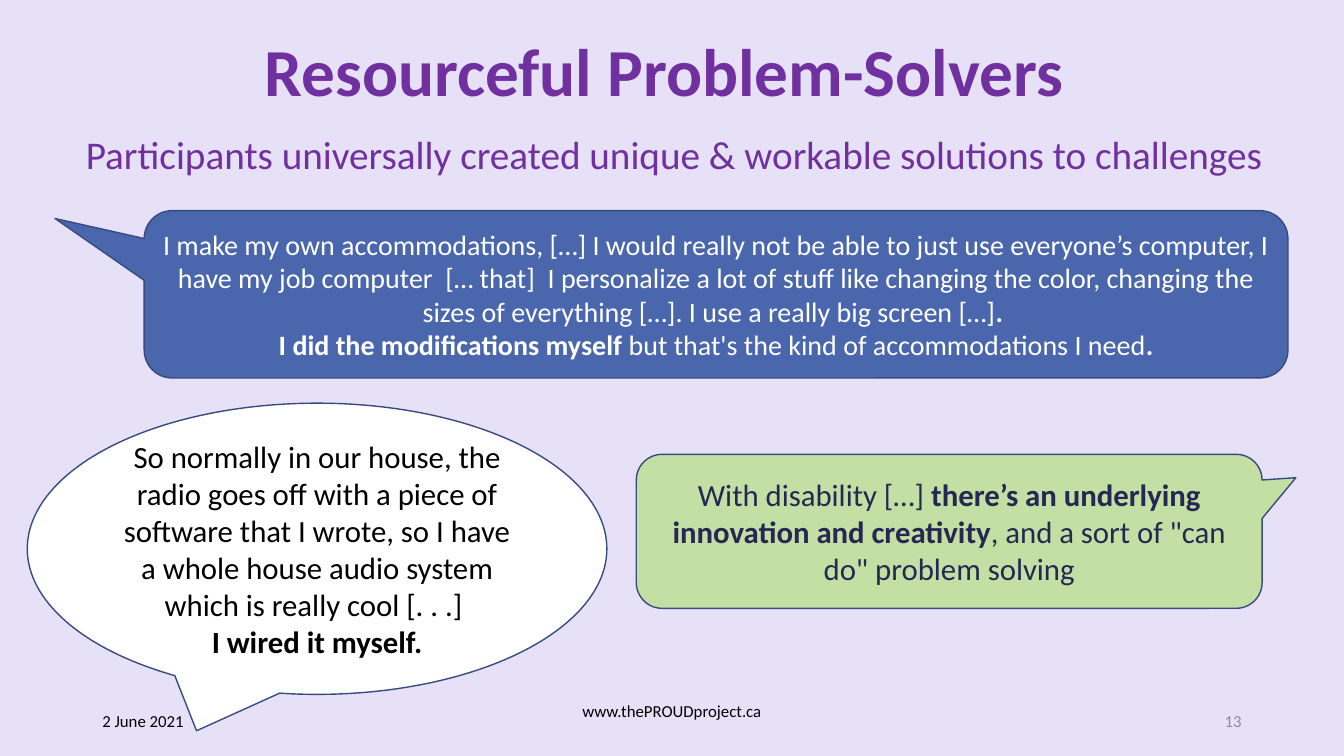
from lxml.etree import SubElement
from pptx import Presentation
from pptx.dml.color import RGBColor
from pptx.enum.shapes import MSO_SHAPE
from pptx.enum.text import MSO_ANCHOR, PP_ALIGN
from pptx.oxml.ns import qn
from pptx.util import Pt

FONT = "Calibri"
COLORS = {
    "background": "E7E1F8",
    "heading": "7030A0",
    "outline": "374B7F",
    "blue": "4A66AC",
    "green": "91DE26",
    "white": "FFFFFF",
    "black": "000000",
    "navy": "242852",
    "gray": "8C8C8C",
}


def color(name):
    return RGBColor.from_string(COLORS[name])


def write_text(frame, paragraphs, size, ink, align=PP_ALIGN.CENTER,
               anchor=MSO_ANCHOR.MIDDLE, line_spacing=None):
    """Fill a frame with paragraphs, each a list of (text, bold) runs."""
    frame.word_wrap = True
    frame.vertical_anchor = anchor
    for index, spans in enumerate(paragraphs):
        para = frame.add_paragraph() if index else frame.paragraphs[0]
        para.alignment = align
        if line_spacing:
            para.line_spacing = line_spacing
        for text, bold in spans:
            span = para.add_run()
            span.text = text
            span.font.name = FONT
            span.font.size = Pt(size)
            span.font.bold = bold
            span.font.color.rgb = color(ink)


def add_text(page, box, text, size, ink, bold=False, **layout):
    left, top, width, height = box
    shape = page.shapes.add_textbox(Pt(left), Pt(top), Pt(width), Pt(height))
    write_text(shape.text_frame, [[(text, bold)]], size, ink, **layout)
    return shape


def add_callout(page, box, kind, fill, adjustments, paragraphs, size, ink,
                opacity=None):
    """Place a speech bubble whose pointer follows the adjustments."""
    left, top, width, height = box
    bubble = page.shapes.add_shape(kind, Pt(left), Pt(top), Pt(width), Pt(height))
    bubble.shadow.inherit = False
    for index, value in enumerate(adjustments):
        bubble.adjustments[index] = value
    bubble.fill.solid()
    bubble.fill.fore_color.rgb = color(fill)
    if opacity:
        fill_color = bubble.element.spPr.find(qn("a:solidFill"))[0]
        SubElement(fill_color, qn("a:alpha"), val=str(opacity * 1000))
    bubble.line.color.rgb = color("outline")
    bubble.line.width = Pt(1)
    write_text(bubble.text_frame, paragraphs, size, ink)


def add_heading(page, box):
    left, top, width, height = box
    add_text(page, (left + 16, top, width - 41, 73.5),
             "Resourceful Problem-Solvers ", 48, "heading", bold=True,
             line_spacing=0.9)
    add_text(page, (left, top + 77, width, height - 77),
             "Participants universally created unique & workable solutions to challenges ",
             28, "heading", anchor=MSO_ANCHOR.TOP, line_spacing=0.9)


def add_quotes(page, box):
    left, top, width, height = box
    # Accommodations quote
    add_callout(
        page, (left + 83.5, top, width - 83.5, 119.5),
        MSO_SHAPE.ROUNDED_RECTANGULAR_CALLOUT, "blue", (-0.578, -0.453, 0.167),
        [[("I make my own accommodations, […] I would really not be able to just "
           "use everyone’s computer, I have my job computer  [… that]  I personalize "
           "a lot of stuff like changing the color, changing the sizes of "
           "everything […]. I use a really big screen […]", False), (". ", True)],
         [("I did the modifications myself ", True),
          ("but that's the kind of accommodations I need", False), (".", True)]],
        20, "white")
    # House audio quote
    add_callout(
        page, (left, top + height - 208, 414, 208),
        MSO_SHAPE.OVAL_CALLOUT, "white", (-0.208, 0.625),
        [[("So normally in our house, the radio goes off with a piece of software "
           "that I wrote, so I have a whole house audio system which is really "
           "cool [. . .] ", False)],
         [("I wired it myself.", True)]],
        22, "black")
    # Innovation quote
    add_callout(
        page, (left + 435, top + 174, 447, 110),
        MSO_SHAPE.ROUNDED_RECTANGULAR_CALLOUT, "green", (0.554, -0.348, 0.167),
        [[("With disability […] ", False),
          ("there’s an underlying innovation and creativity", True),
          (", and a sort of \"can do\" problem solving", False)]],
        22, "navy", opacity=40)


def add_footer(page, box):
    left, top, width, height = box
    side, middle = 216, 324
    add_text(page, (left, top, side, height), "2 June 2021", 12, "black",
             align=PP_ALIGN.LEFT)
    address = add_text(page, (left + (width - middle) / 2, top, middle, height),
                       "www.thePROUDproject.ca", 12, "black",
                       anchor=MSO_ANCHOR.TOP)
    address.text_frame.margin_top = 0
    add_text(page, (left + width - side, top, side, height), "13", 12, "gray",
             align=PP_ALIGN.RIGHT)


def main():
    deck = Presentation()
    deck.slide_width, deck.slide_height = Pt(960), Pt(540)
    page = deck.slides.add_slide(deck.slide_layouts[6])
    page.background.fill.solid()
    page.background.fill.fore_color.rgb = color("background")

    add_heading(page, (50, 16.5, 869, 137))
    add_quotes(page, (19.5, 150.5, 900.5, 345.5))
    add_footer(page, (66, 500.5, 828, 28.75))
    deck.save("out.pptx")


if __name__ == "__main__":
    main()
